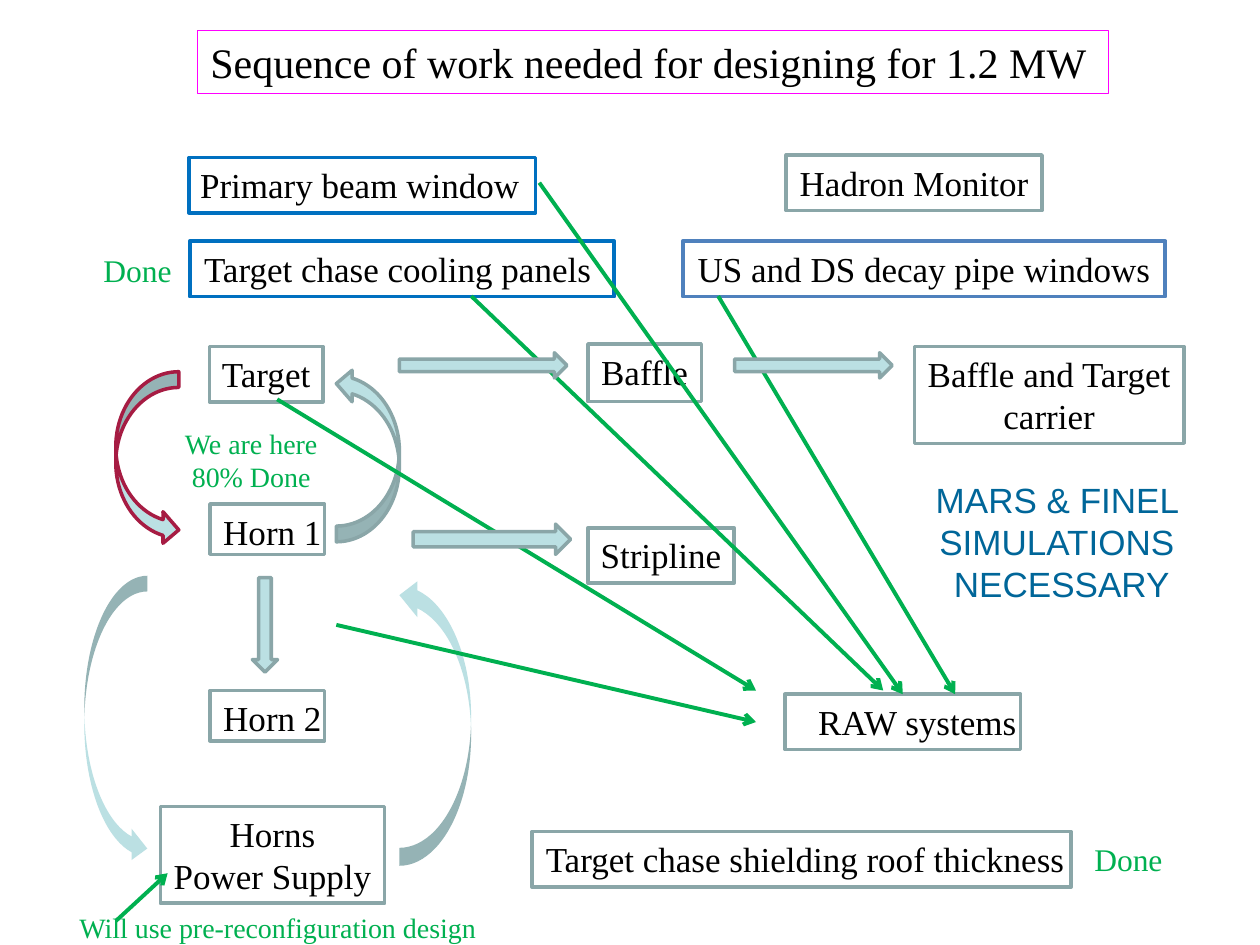
from dataclasses import dataclass

from lxml import etree
from pptx import Presentation
from pptx.dml.color import RGBColor
from pptx.enum import shapes as kinds, text as txt
from pptx.oxml import ns
from pptx.util import Pt

KIND = kinds.MSO_SHAPE


@dataclass(frozen=True)
class Theme:
    serif: str = "Times New Roman"
    sans: str = "Arial"
    ink: str = "000000"
    green: str = "00B050"
    teal: str = "006699"
    grey: str = "8AA6A8"
    blue: str = "0070C0"
    steel: str = "4F81BD"
    pink: str = "FF00FF"
    wine: str = "A61C43"
    pale: str = "BBE0E3"
    title: int = 24
    body: int = 20
    mark: int = 18
    note: int = 16


T = Theme()


def apply(obj, **vals):
    for key, val in vals.items():
        setattr(obj, key, val)


def pts(*vals):
    return [Pt(v) for v in vals]


def rgb(code):
    return RGBColor.from_string(code)


def paint(shape, fill=None, edge=None, width=2):
    shape.shadow.inherit = False
    for part, code in ((shape.fill, fill), (shape.line.fill, edge)):
        if code:
            part.solid()
            part.fore_color.rgb = rgb(code)
        else:
            part.background()
    if edge:
        shape.line.width = Pt(width)


def write(shape, words, size=T.body, color=T.ink, face=T.serif, wrap=False):
    frame = shape.text_frame
    frame.text = words
    apply(frame, word_wrap=wrap, vertical_anchor=txt.MSO_ANCHOR.TOP,
          auto_size=txt.MSO_AUTO_SIZE.SHAPE_TO_FIT_TEXT)
    for para in frame.paragraphs:
        para.alignment = txt.PP_ALIGN.CENTER
        apply(para.font, size=Pt(size), name=face)
        para.font.color.rgb = rgb(color)


def label(page, x, y, w, h, words, **style):
    write(page.shapes.add_textbox(*pts(x, y, w, h)), words, **style)


def panel(page, x, y, w, h, words, edge, width=2.25, **style):
    """Outlined rectangle that holds its own text."""
    shape = page.shapes.add_shape(KIND.RECTANGLE, *pts(x, y, w, h))
    paint(shape, edge=edge, width=width)
    write(shape, words, **style)


def step(page, x, y, w, h, words, edge=T.grey, span=None, shift=0, wrap=False):
    """Group of a label and a frame; span and shift set the label apart."""
    group = page.shapes.add_group_shape()
    label(group, x + shift, y, span or w, h, words, wrap=wrap)
    rect = group.shapes.add_shape(KIND.RECTANGLE, *pts(x, y, w, h))
    paint(rect, edge=edge)
    return rect


def block(page, kind, x, y, w, h, edge=T.grey, turn=0):
    shape = page.shapes.add_shape(kind, *pts(x, y, w, h))
    paint(shape, T.pale, edge)
    shape.rotation = turn


def link(page, x1, y1, x2, y2, goal=None):
    line = page.shapes.add_connector(kinds.MSO_CONNECTOR.STRAIGHT, *pts(x1, y1, x2, y2))
    if goal is not None:
        line.end_connect(goal, 0)
    line.line.color.rgb = rgb(T.green)
    line.line.width = Pt(2.25)
    etree.SubElement(line.line._ln, ns.qn("a:tailEnd"), type="arrow")
    etree.SubElement(line._element.spPr, ns.qn("a:effectLst"))


def header(page, x, y, w, h):
    panel(page, x, y, w, h, "Sequence of work needed for designing for 1.2 MW ",
          T.pink, 0.75, size=T.title)


def windows(page, x, y, w, h):
    """Beam windows, cooling panels and monitor."""
    row = y + 49.2
    step(page, x + 56, y + 1.4, 198, 31.7, "Primary beam window", T.blue, shift=-1.4)
    step(page, x + 397.3, y, 146.2, 31.7, "Hadron Monitor")
    panel(page, x + 56.5, row, 242.6, 31.7, "Target chase cooling panels ", T.blue)
    panel(page, x + w - 275.8, row, 275.8, 31.7, "US and DS decay pipe windows", T.steel)
    label(page, x - 0.4, row + 2, 54, 29, "Done", size=T.mark, color=T.green)


def column(page, x, y, w, h):
    """Target and horns with the loops between them."""
    step(page, x + 71.5, y, 64.8, 31.7, "Target")
    for words, top in (("Horn 1", 90), ("Horn 2", 196.6)):
        step(page, x + 71.8, y + top, 65.5, 28.8, words, span=71.3)
    step(page, x + 43.4, y + h - 55.4, 128.2, 55.4, "Horns\nPower Supply")
    loops = ((18, 14.4, 36, 99.4, T.wine, 0), (144, 12.2, 36, 99.4, T.grey, 180),
             (0, 131, 36, 164.9, None, 0), (w - 41, 131.8, 41, 164.9, None, 180))
    for left, top, wide, high, edge, turn in loops:
        block(page, KIND.CURVED_RIGHT_ARROW, x + left, y + top, wide, high, edge, turn)
    block(page, KIND.RIGHT_ARROW, x + 76.2, y + 151.9, 54, 14.4, turn=90)
    label(page, x + 47.8, y + 42, 95, 46, "We are here\n80% Done", size=T.note, color=T.green)


def parts(page, x, y, w, h):
    """Baffle, stripline and carrier, with the simulation remark."""
    step(page, x, y, 64.8, 33, "Baffle")
    step(page, x, y + 105, 83.5, 31.7, "Stripline")
    step(page, x + 186.5, y + 1.4, 154.1, 55.4, "Baffle and Target\ncarrier")
    label(page, x + 175.7, y + 73.4, 190, 80, "MARS & FINEL \nSIMULATIONS \nNECESSARY",
          color=T.teal, face=T.sans)


def cooling(page, x, y, w, h):
    """Water systems box and the lines that lead to it."""
    raw = step(page, x, y, w, h, "RAW systems", span=151.2, wrap=True)
    for start, end in (((410.4, 169.2), (545.8, y)), ((192.2, 357.1), (432, 412.6)),
                       ((158.4, 228.2), (432, 394.6)), ((269.3, 169.2), (504.7, 394.6))):
        link(page, *start, *end)
    link(page, 308.2, 104.4, x + w / 2, y, raw)


def flows(page, x, y, w, h):
    """Block arrows between the columns."""
    for left, top, wide, high in ((0, 0, 95.8, 14.4), (w - 90, 0, 90, 14.4), (7.9, 97.9, 90, 17.3)):
        block(page, KIND.RIGHT_ARROW, x + left, y + top, wide, high)


def footer(page, x, y, w, h):
    step(page, x + 283, y, 308.2, 31.7, "Target chase shielding roof thickness", span=312.5)
    label(page, x + w - 54, y + 1.4, 54, 29, "Done", size=T.mark, color=T.green)
    label(page, x, y + 41.8, 275.8, 26.6, "Will use pre-reconfiguration design",
          size=T.note, color=T.green, wrap=True)
    link(page, x + 45.3, y + 51.1, x + 74.9, y + 23.8)


def main():
    deck = Presentation()
    apply(deck, slide_width=Pt(720), slide_height=Pt(540))
    page = deck.slides.add_slide(deck.slide_layouts[6])
    header(page, 113, 17.3, 520.6, 36)
    windows(page, 52, 88.6, 614, 81.3)
    column(page, 48.2, 198, 221, 318.2)
    parts(page, 336, 196.6, 365.7, 153.4)
    cooling(page, 448.6, 396.7, 134.6, 31.7)
    flows(page, 228.2, 201.6, 281.6, 115.2)
    footer(page, 20.9, 475.2, 650.9, 68.4)
    deck.save("out.pptx")


if __name__ == "__main__":
    main()
